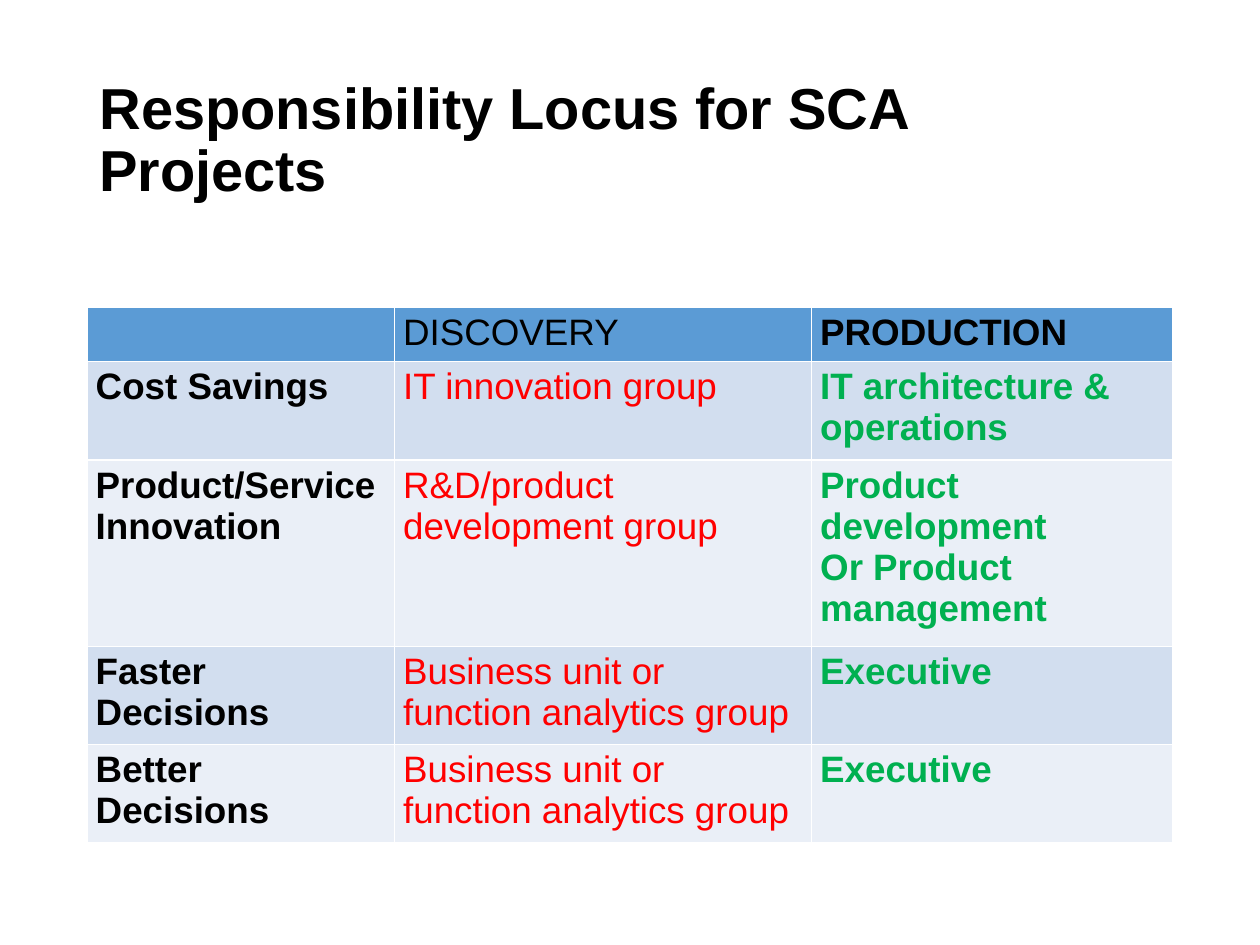
import pptx
import pptx.dml.color
import pptx.enum.text
import pptx.oxml
import pptx.oxml.ns
import pptx.util

Inches = pptx.util.Inches
Pt = pptx.util.Pt

TITLE = "Responsibility Locus for SCA Projects"
ROWS = [
    ("", "DISCOVERY", "PRODUCTION"),
    ("Cost Savings", "IT innovation group", "IT architecture & operations"),
    ("Product/Service Innovation", "R&D/product development group",
     "Product development\nOr Product management"),
    ("Faster Decisions", "Business unit or function analytics group", "Executive"),
    ("Better Decisions", "Business unit or function analytics group", "Executive"),
]
COLUMN_WIDTHS = [2.44, 3.31, 2.87]
ROW_HEIGHTS = [0.42, 0.78, 1.48, 0.78, 0.78]
COLORS = {
    "text": "000000", "discovery": "FF0000", "production": "00B050",
    "header": "5B9BD5", "odd": "D2DEEF", "even": "EAEFF7", "border": "FFFFFF",
}
COLUMN_COLORS = ["text", "discovery", "production"]
COLUMN_BOLD = [True, False, True]
CELL_MARGINS = {"margin_left": 0.07, "margin_right": 0.07,
                "margin_top": 0.04, "margin_bottom": 0.04}


def rgb(name):
    return pptx.dml.color.RGBColor.from_string(COLORS[name])


def format_text(text_frame, size, color, bold):
    for paragraph in text_frame.paragraphs:
        values = {"name": "Arial", "size": Pt(size), "bold": bold}
        for attribute, value in values.items():
            setattr(paragraph.font, attribute, value)
        paragraph.font.color.rgb = rgb(color)


def add_borders(cell):
    """Put a thin line on all four sides; lines must precede the fill."""
    properties = cell._tc.get_or_add_tcPr()
    for index, side in enumerate(("lnL", "lnR", "lnT", "lnB")):
        properties.insert(index, pptx.oxml.parse_xml(
            f'<a:{side} {pptx.oxml.ns.nsdecls("a")} w="12700"><a:solidFill>'
            f'<a:srgbClr val="{COLORS["border"]}"/></a:solidFill></a:{side}>'))


def add_title(slide):
    box = slide.shapes.add_textbox(Inches(0.69), Inches(0.4), Inches(7.55), Inches(1.45))
    frame = box.text_frame
    frame.word_wrap = True
    frame.vertical_anchor = pptx.enum.text.MSO_ANCHOR.MIDDLE
    frame.text = TITLE
    frame.paragraphs[0].line_spacing = 0.9
    format_text(frame, 33, "text", True)


def add_responsibility_table(slide):
    table = slide.shapes.add_table(
        len(ROWS), len(COLUMN_WIDTHS), Inches(0.69), Inches(2.44),
        Inches(sum(COLUMN_WIDTHS)), Inches(sum(ROW_HEIGHTS))).table
    for column, width in zip(table.columns, COLUMN_WIDTHS):
        column.width = Inches(width)
    for row, height in zip(table.rows, ROW_HEIGHTS):
        row.height = Inches(height)

    for row_index, texts in enumerate(ROWS):
        is_header = row_index == 0
        fill = "header" if is_header else ("even", "odd")[row_index % 2]
        for column_index, text in enumerate(texts):
            cell = table.cell(row_index, column_index)
            cell.text = text
            for attribute, margin in CELL_MARGINS.items():
                setattr(cell, attribute, Inches(margin))
            cell.fill.solid()
            cell.fill.fore_color.rgb = rgb(fill)
            add_borders(cell)
            color = "text" if is_header else COLUMN_COLORS[column_index]
            format_text(cell.text_frame, 21, color, COLUMN_BOLD[column_index])


def main():
    presentation = pptx.Presentation()
    presentation.slide_width = Inches(10)
    presentation.slide_height = Inches(7.5)
    slide = presentation.slides.add_slide(presentation.slide_layouts[6])
    add_title(slide)
    add_responsibility_table(slide)
    presentation.save("out.pptx")


if __name__ == "__main__":
    main()
